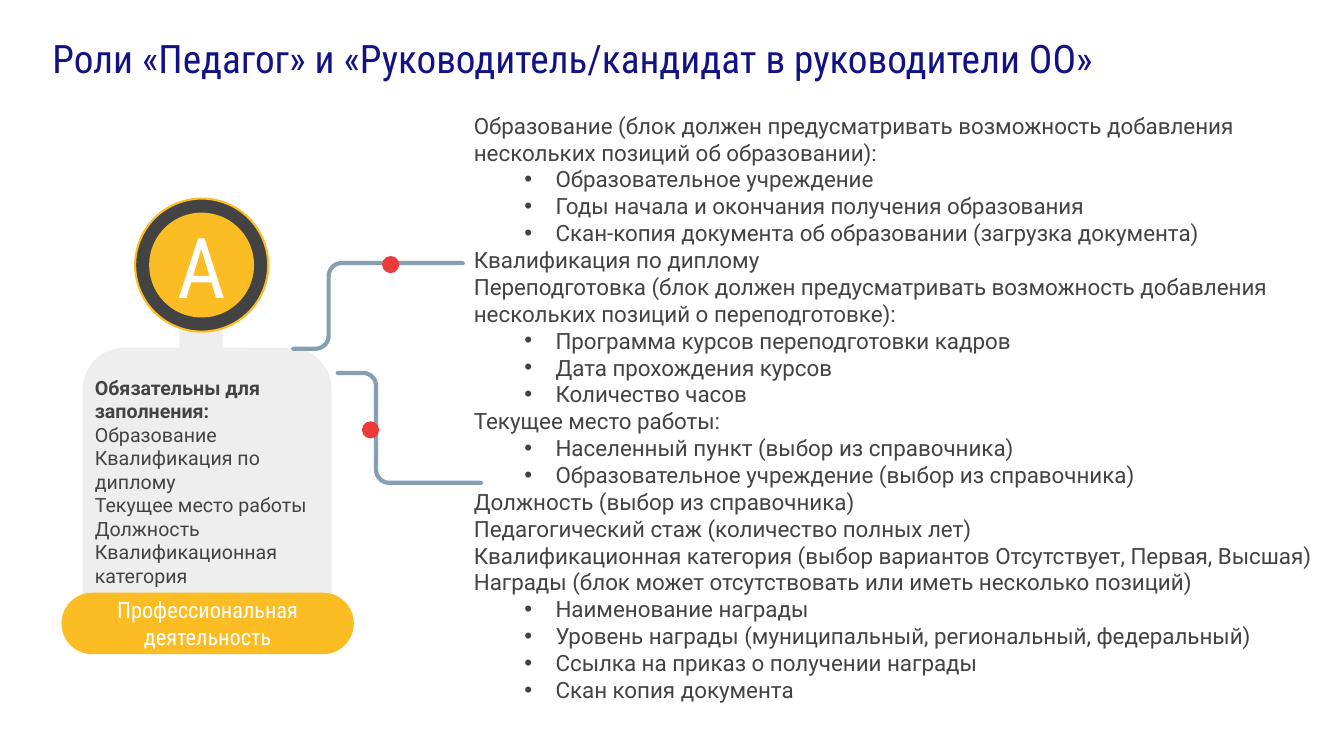
from dataclasses import dataclass
from math import cos, pi, sin

from lxml import etree
from pptx import Presentation
from pptx import util as u
from pptx.dml.color import RGBColor
from pptx.enum import shapes, text
from pptx.oxml.ns import qn

PX = 9144  # 100 px to the inch
NAVY = RGBColor(0x12, 0x12, 0x86)
DARK = RGBColor(0x43, 0x43, 0x43)
PALE = RGBColor(0xEE, 0xEE, 0xEE)
GOLD = RGBColor(0xFC, 0xBD, 0x24)
STEEL = RGBColor(0x86, 0x9F, 0xB2)
RED = RGBColor(0xEC, 0x3A, 0x3B)
WHITE = RGBColor(0xFF, 0xFF, 0xFF)
SANS, SLIM = "Roboto", "Roboto Condensed"
KIND = shapes.MSO_SHAPE
MID, TOP = text.MSO_ANCHOR.MIDDLE, text.MSO_ANCHOR.TOP
LEFT, CENTER = text.PP_ALIGN.LEFT, text.PP_ALIGN.CENTER

Box = tuple[int, int, int, int]
Point = tuple[float, float]


@dataclass
class Part:
    kind: KIND
    box: Box
    fill: RGBColor
    edge: RGBColor | None = None
    round: float | None = None


@dataclass
class Item:
    words: str
    sub: bool = False
    bold: bool = False


@dataclass
class Link:
    points: list[Point]
    dot: Point


def place(shape, box: Box) -> None:
    shape.left, shape.top, shape.width, shape.height = (n * PX for n in box)


def draw(tree, part: Part):
    shape = tree.add_shape(part.kind, *(n * PX for n in part.box))
    shape.shadow.inherit = False
    shape.fill.solid()
    shape.fill.fore_color.rgb = part.fill
    if part.edge is None:
        shape.line.fill.background()
    else:
        shape.line.color.rgb = part.edge
        shape.line.width = u.Pt(1.5)
    if part.round is not None:
        shape.adjustments[0] = part.round
    return shape


def mark(para, sub: bool) -> None:
    """Set the bullet and the indents of a paragraph."""
    props = para._p.get_or_add_pPr()
    props.set("marL", str(81 * PX if sub else 0))
    props.set("indent", str(-31 * PX if sub else 0))
    if sub:
        para.level = 1
        etree.SubElement(props, qn("a:buFont")).set("typeface", "Arial")
        etree.SubElement(props, qn("a:buChar")).set("char", "•")
    else:
        etree.SubElement(props, qn("a:buNone"))


def write(shape, items: list[Item], *, font: str, size: int, color: RGBColor,
          align=LEFT, anchor=MID, pad: Box = (10, 10, 10, 10)) -> None:
    frame = shape.text_frame
    frame.word_wrap = True
    frame.auto_size = text.MSO_AUTO_SIZE.NONE
    frame.vertical_anchor = anchor
    (frame.margin_left, frame.margin_top,
     frame.margin_right, frame.margin_bottom) = (n * PX for n in pad)
    for i, item in enumerate(items):
        para = frame.add_paragraph() if i else frame.paragraphs[0]
        para.alignment = align
        para.line_spacing = 1.0
        para.space_before = para.space_after = u.Pt(0)
        mark(para, item.sub)
        run = para.add_run()
        run.text = item.words
        run.font.name, run.font.size = font, u.Pt(size)
        run.font.bold = item.bold
        run.font.color.rgb = color


def bend(a: Point, b: Point, c: Point, radius: int = 13, steps: int = 8) -> list[Point]:
    """Points of a rounded right-angle turn at b, coming from a and leaving to c."""
    def unit(p: Point, q: Point) -> Point:
        dx, dy = q[0] - p[0], q[1] - p[1]
        size = abs(dx) + abs(dy)
        return dx / size, dy / size

    (ax, ay), (cx, cy) = unit(a, b), unit(b, c)
    turns = [pi / 2 * i / steps for i in range(steps + 1)]
    return [(b[0] + radius * (ax * (sin(t) - 1) + cx * (1 - cos(t))),
             b[1] + radius * (ay * (sin(t) - 1) + cy * (1 - cos(t)))) for t in turns]


def join(tree, link: Link) -> None:
    a, b, c, d = link.points
    route = [(x * PX, y * PX) for x, y in [*bend(a, b, c), *bend(b, c, d), d]]
    pen = tree.build_freeform(a[0] * PX, a[1] * PX)
    pen.add_line_segments(route, close=False)
    line = pen.convert_to_shape()
    line.shadow.inherit = False
    line.fill.background()
    line.line.color.rgb = STEEL
    line.line.width = u.Pt(3)
    line.line._get_or_add_ln().set("cap", "rnd")
    x, y = link.dot
    draw(tree, Part(KIND.OVAL, (x, y, 17, 17), RED))


TITLE = "Роли «Педагог» и «Руководитель/кандидат в руководители ОО»"
NEEDS = [
    Item("Обязательны для заполнения:", bold=True),
    Item("Образование"),
    Item("Квалификация по диплому"),
    Item("Текущее место работы"),
    Item("Должность"),
    Item("Квалификационная категория"),
]
FIELDS = [
    Item("Образование (блок должен предусматривать возможность добавления "
         "нескольких позиций об образовании):"),
    Item("Образовательное учреждение", sub=True),
    Item("Годы начала и окончания получения образования", sub=True),
    Item("Скан-копия документа об образовании (загрузка документа)", sub=True),
    Item("Квалификация по диплому"),
    Item("Переподготовка (блок должен предусматривать возможность добавления "
         "нескольких позиций о переподготовке):"),
    Item("Программа курсов переподготовки кадров", sub=True),
    Item("Дата прохождения курсов", sub=True),
    Item("Количество часов", sub=True),
    Item("Текущее место работы:"),
    Item("Населенный пункт (выбор из справочника)", sub=True),
    Item("Образовательное учреждение (выбор из справочника)", sub=True),
    Item("Должность (выбор из справочника)"),
    Item("Педагогический стаж (количество полных лет)"),
    Item("Квалификационная категория (выбор вариантов Отсутствует, Первая, Высшая)"),
    Item("Награды (блок может отсутствовать или иметь несколько позиций)"),
    Item("Наименование награды", sub=True),
    Item("Уровень награды (муниципальный, региональный, федеральный)", sub=True),
    Item("Ссылка на приказ о получении награды", sub=True),
    Item("Скан копия документа", sub=True),
]
LINKS = [
    Link([(335, 370), (373, 370), (373, 479), (477, 479)], (359, 418)),
    Link([(291, 346), (326, 346), (326, 261), (459, 261)], (379, 254)),
]


def main() -> None:
    deck = Presentation()
    deck.slide_width, deck.slide_height = 1333 * PX, 750 * PX
    slide = deck.slides.add_slide(deck.slide_layouts[1])
    tree = slide.shapes

    # Title and list of fields
    head, body = tree.title, slide.placeholders[1]
    place(head, (39, 22, 1224, 70))
    write(head, [Item(TITLE)], font=SLIM, size=28, color=NAVY, pad=(13, 13, 13, 13))
    place(body, (460, 106, 855, 602))
    write(body, FIELDS, font=SANS, size=16, color=DARK, anchor=TOP, pad=(10, 5, 10, 5))

    # Badge figure
    badge = tree.add_group_shape().shapes
    card = draw(badge, Part(KIND.ROUNDED_RECTANGLE, (82, 345, 247, 295), PALE, round=0.167))
    write(card, NEEDS, font=SANS, size=14, color=DARK, pad=(0, 10, 0, 40))
    label = draw(badge, Part(KIND.ROUNDED_RECTANGLE, (61, 588, 290, 61), GOLD, round=0.5))
    write(label, [Item("Профессиональная деятельность")],
          font=SLIM, size=16, color=WHITE, align=CENTER)
    draw(badge, Part(KIND.RECTANGLE, (178, 257, 43, 111), PALE))
    draw(badge, Part(KIND.OVAL, (134, 197, 132, 132), DARK, edge=GOLD))
    disc = draw(badge, Part(KIND.OVAL, (148, 211, 104, 104), GOLD))
    write(disc, [Item("А")], font=SLIM, size=60, color=WHITE, align=CENTER,
          pad=(0, 10, 0, 10))

    # Links from the badge to the list
    for link in LINKS:
        join(tree, link)

    deck.save("out.pptx")


if __name__ == "__main__":
    main()
